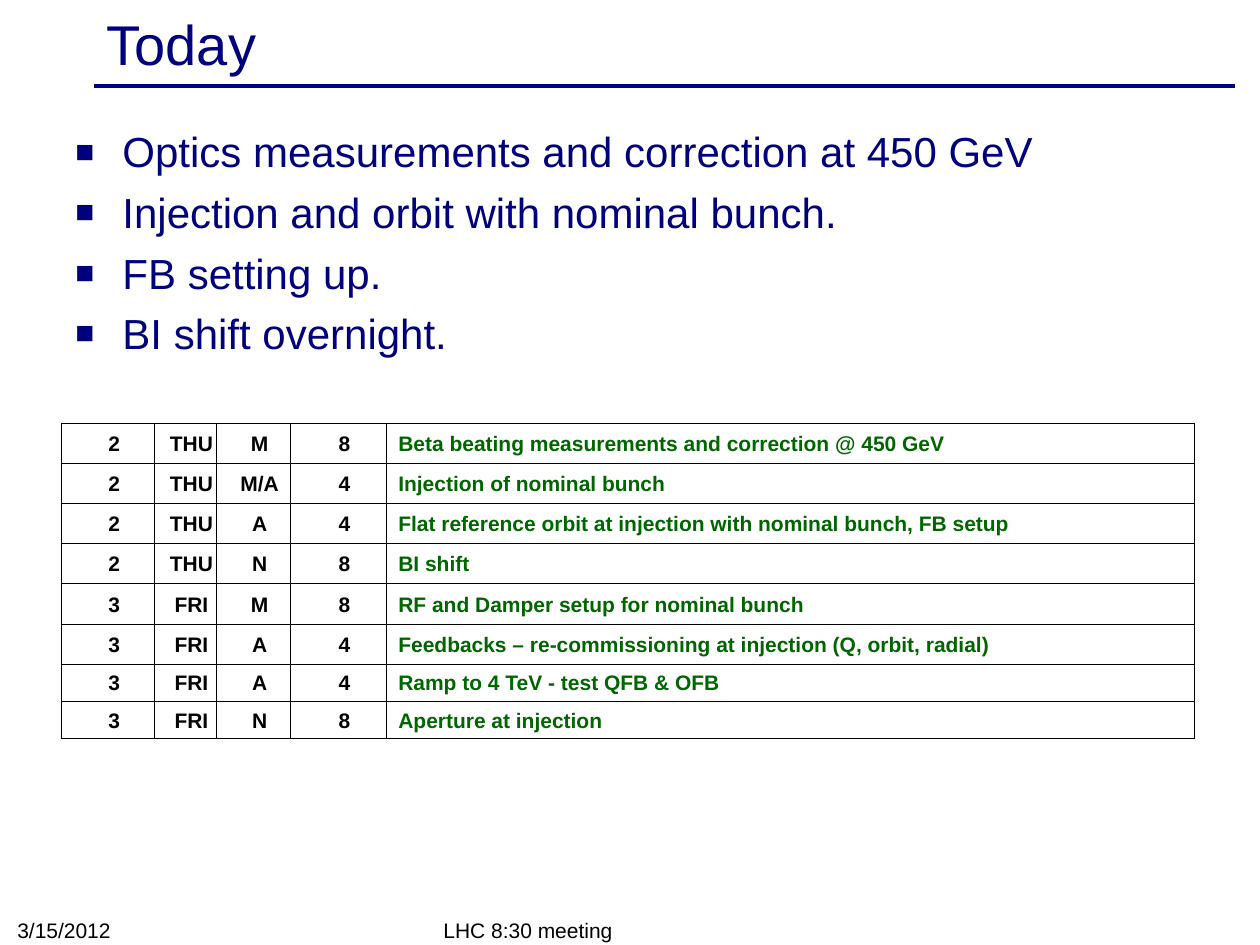
"""Build the meeting slide with today's plan and the shift table."""
from lxml.etree import SubElement
from pptx import Presentation
from pptx.dml.color import RGBColor as RGB
from pptx.enum.shapes import MSO_CONNECTOR as CONN
from pptx.enum.text import MSO_ANCHOR as ANCHOR, PP_ALIGN as ALIGN
from pptx.oxml.ns import qn
from pptx.util import Cm, Pt

COLORS = {"navy": "00007D", "black": "000000", "green": "006600", "white": "FFFFFF"}

PLAN = [
    "Optics measurements and correction at 450 GeV",
    "Injection and orbit with nominal bunch.",
    "FB setting up.",
    "BI shift overnight.",
]

SHIFTS = [
    ("2", "THU", "M", "8", "Beta beating measurements and correction @ 450 GeV"),
    ("2", "THU", "M/A", "4", "Injection of nominal bunch"),
    ("2", "THU", "A", "4", "Flat reference orbit at injection with nominal bunch, FB setup"),
    ("2", "THU", "N", "8", "BI shift"),
    ("3", "FRI", "M", "8", "RF and Damper setup for nominal bunch"),
    ("3", "FRI", "A", "4", "Feedbacks – re-commissioning at injection (Q, orbit, radial)"),
    ("3", "FRI", "A", "4", "Ramp to 4 TeV - test QFB & OFB"),
    ("3", "FRI", "N", "8", "Aperture at injection"),
]
COL_WIDTHS = [1.87, 1.25, 1.5, 1.92, 16.3]
ROW_HEIGHTS = [0.81] * 6 + [0.75] * 2


def rgb(name):
    return RGB.from_string(COLORS[name])


def write(p, text, size=12, color="black", bold=False, align=ALIGN.LEFT, before=0):
    p.alignment = align
    p.space_before = Pt(before)
    r = p.add_run()
    r.text = text
    r.font.name = "Arial"
    r.font.size = Pt(size)
    r.font.bold = bold
    r.font.color.rgb = rgb(color)


def add_bullet(p, color):
    pPr = p._p.get_or_add_pPr()
    pPr.set("marL", str(Cm(0.95)))
    pPr.set("indent", str(-Cm(0.95)))
    clr = SubElement(pPr, qn("a:buClr"))
    SubElement(clr, qn("a:srgbClr"), val=COLORS[color])
    SubElement(pPr, qn("a:buSzPct"), val="75000")
    SubElement(pPr, qn("a:buFont"), typeface="Arial")
    SubElement(pPr, qn("a:buChar"), char="■")


def add_borders(cell, color, width):
    tcPr = cell._tc.get_or_add_tcPr()
    for side in ("lnL", "lnR", "lnT", "lnB"):
        ln = SubElement(tcPr, qn(f"a:{side}"), w=str(Pt(width)))
        fill = SubElement(ln, qn("a:solidFill"))
        SubElement(fill, qn("a:srgbClr"), val=COLORS[color])


class SlideBuilder:
    """Hold the style and the current slide."""

    def __init__(self, slide, accent="navy"):
        self.s = slide
        self.accent = accent

    def rule(self, x1, x2, y):
        line = self.s.shapes.add_connector(CONN.STRAIGHT, Cm(x1), Cm(y), Cm(x2), Cm(y))
        line.line.color.rgb = rgb(self.accent)
        line.line.width = Pt(2)
        SubElement(line._element.spPr, qn("a:effectLst"))

    def frame(self, x, y, w, h, anchor):
        tf = self.s.shapes.add_textbox(Cm(x), Cm(y), Cm(w), Cm(h)).text_frame
        tf.word_wrap = True
        tf.vertical_anchor = anchor
        return tf

    def text(self, x, y, w, h, text, anchor=ANCHOR.BOTTOM, **fmt):
        write(self.frame(x, y, w, h, anchor).paragraphs[0], text, **fmt)

    def bullets(self, x, y, w, h, items):
        tf = self.frame(x, y, w, h, ANCHOR.TOP)
        tf.margin_top = Cm(0.23)
        for i, item in enumerate(items):
            p = tf.add_paragraph() if i else tf.paragraphs[0]
            add_bullet(p, self.accent)
            write(p, item, size=24, color=self.accent, before=5.8 if i else 0)

    def table(self, x, y, widths, heights, rows):
        tbl = self.s.shapes.add_table(len(rows), len(widths), Cm(x), Cm(y),
                                      Cm(sum(widths)), Cm(sum(heights))).table
        tbl.first_row = tbl.horz_banding = False
        for col, w in zip(tbl.columns, widths):
            col.width = Cm(w)
        for row, h, values in zip(tbl.rows, heights, rows):
            row.height = Cm(h)
            for i, (cell, value) in enumerate(zip(row.cells, values)):
                self.cell(cell, value, is_task=i == len(widths) - 1)

    def cell(self, cell, value, is_task):
        cell.vertical_anchor = ANCHOR.MIDDLE
        cell.margin_left, cell.margin_top = Cm(0.25), Cm(0.03)
        cell.margin_right = cell.margin_bottom = 0
        add_borders(cell, "black", 0.5)
        if is_task:
            cell.fill.solid()
            cell.fill.fore_color.rgb = rgb("white")
        else:
            cell.fill.background()
        write(cell.text_frame.paragraphs[0], value, bold=True,
              color="green" if is_task else "black",
              align=ALIGN.LEFT if is_task else ALIGN.CENTER)


def main():
    prs = Presentation()
    prs.slide_width, prs.slide_height = Cm(25.4), Cm(19.05)
    b = SlideBuilder(prs.slides.add_slide(prs.slide_layouts[6]))
    b.rule(1.9, 24.9, 1.73)
    b.text(1.9, 0.15, 22.86, 1.45, "Today", anchor=ANCHOR.MIDDLE, size=32, color="navy")
    b.bullets(1.27, 2.31, 22.86, 6.2, PLAN)
    b.text(8.69, 18.42, 8.05, 0.71, "LHC 8:30 meeting")
    b.text(0.1, 18.39, 5.92, 0.74, "3/15/2012")
    b.table(1.24, 8.53, COL_WIDTHS, ROW_HEIGHTS, SHIFTS)
    prs.save("out.pptx")


if __name__ == "__main__":
    main()
